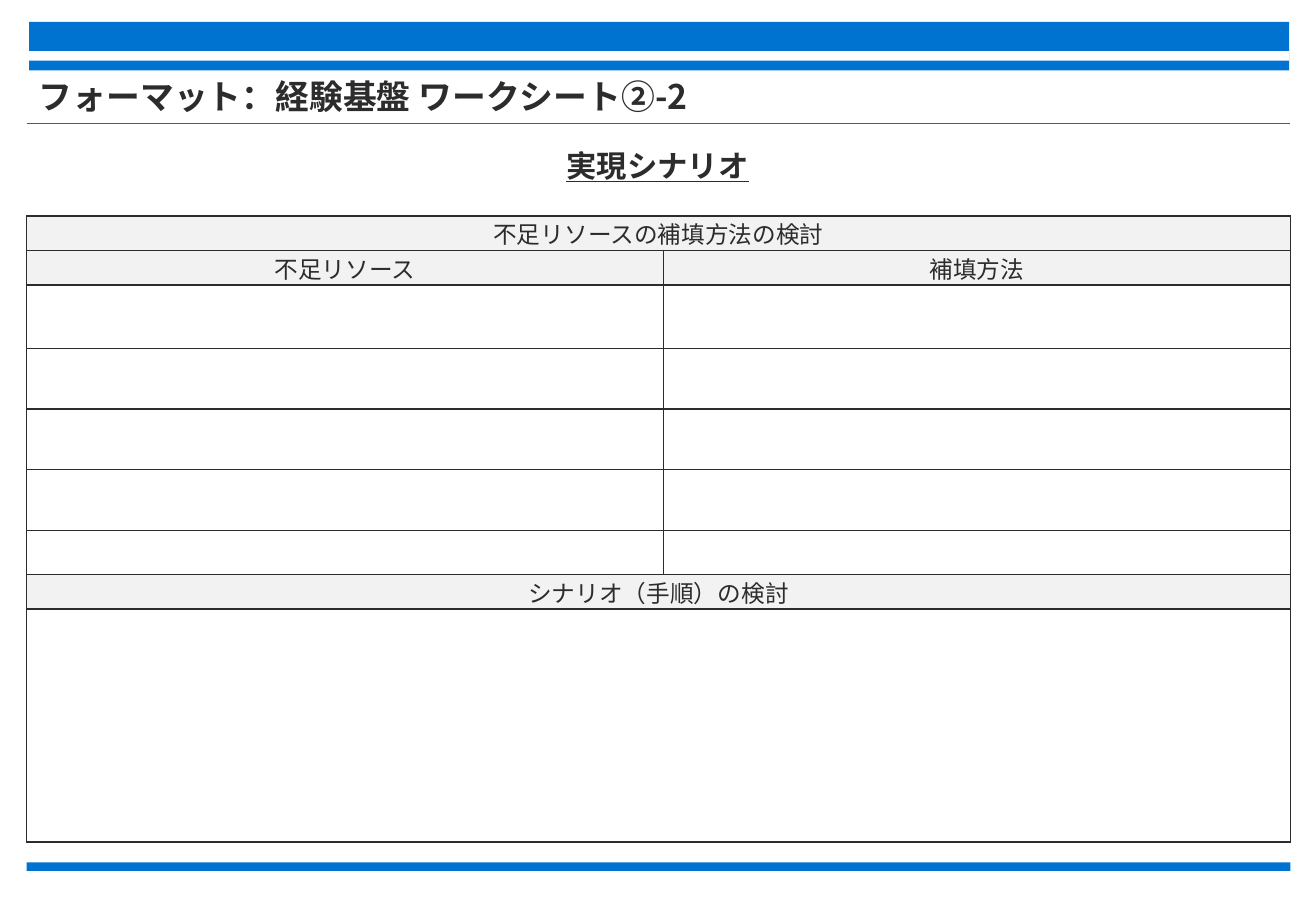
from dataclasses import dataclass

from lxml.etree import SubElement
from pptx import Presentation
from pptx.dml.color import RGBColor as RGB
from pptx.enum.shapes import MSO_CONNECTOR as CONN, MSO_SHAPE as SHAPE
from pptx.enum.text import MSO_ANCHOR as ANCHOR, PP_ALIGN as ALIGN
from pptx.oxml.ns import qn
from pptx.util import Inches, Pt


@dataclass(frozen=True)
class Theme:
    blue: RGB = RGB(0x00, 0x72, 0xCF)
    rule: RGB = RGB(0x00, 0x72, 0xCE)
    white: RGB = RGB(0xFF, 0xFF, 0xFF)
    ink: RGB = RGB(0x2C, 0x2C, 0x2C)
    header: RGB = RGB(0xF2, 0xF2, 0xF2)
    font: str = "Noto Sans CJK JP"
    latin: str = "Calibri"
    title: int = 20
    subtitle: int = 18
    body: int = 14


T = Theme()
LEFT, WIDTH = 0.22, 10.4
HEAD_H = 0.22


def inches(*lengths):
    return [Inches(v) for v in lengths]


def add_run(p, text, size, latin=T.font, bold=False, underline=False):
    r = p.add_run()
    r.text = text
    f = r.font
    f.name, f.size, f.bold, f.underline = latin, Pt(size), bold, underline
    f.color.rgb = T.ink
    SubElement(r._r.get_or_add_rPr(), qn("a:ea"), typeface=T.font)


def add_bar(s, box, color):
    sp = s.shapes.add_shape(SHAPE.RECTANGLE, *inches(*box))
    sp.shadow.inherit = False
    sp.fill.solid()
    sp.fill.fore_color.rgb = color
    sp.line.fill.background()


def add_frame(s):
    """Blue bands at top and bottom, and the rule under the title."""
    add_bar(s, (LEFT, 7.1, WIDTH, 0.07), T.blue)
    add_bar(s, (0.24, 0.18, 10.37, 0.4), T.blue)
    add_bar(s, (0.24, 0.42, 10.37, 0.08), T.white)
    line = s.shapes.add_connector(CONN.STRAIGHT, *inches(LEFT, 1.02, LEFT + WIDTH, 1.02))
    line.line.color.rgb = T.rule
    line.line.width = Pt(0.5)
    SubElement(line._element.spPr, qn("a:effectLst"))


def set_title(s, text, box):
    sp = s.shapes.title
    sp.left, sp.top, sp.width, sp.height = inches(*box)
    tf = sp.text_frame
    tf.vertical_anchor = ANCHOR.MIDDLE
    p = tf.paragraphs[0]
    p.alignment, p.line_spacing = ALIGN.LEFT, 0.9
    add_run(p, text, T.title, bold=True)


def add_subtitle(s, text, box):
    tf = s.shapes.add_textbox(*inches(*box)).text_frame
    tf.word_wrap = True
    p = tf.paragraphs[0]
    p.alignment = ALIGN.CENTER
    add_run(p, text, T.subtitle, T.latin, bold=True, underline=True)


def set_borders(cell):
    tcPr = cell._tc.get_or_add_tcPr()
    for i, side in enumerate(("lnL", "lnR", "lnT", "lnB")):
        ln = tcPr.makeelement(qn(f"a:{side}"), {"w": str(Pt(1))})
        fill = SubElement(ln, qn("a:solidFill"))
        SubElement(fill, qn("a:srgbClr"), val=str(T.ink))
        tcPr.insert(i, ln)


def fill_header(cell, text):
    cell.margin_left = cell.margin_right = Inches(0.01)
    cell.margin_top = cell.margin_bottom = 0
    cell.fill.solid()
    cell.fill.fore_color.rgb = T.header
    p = cell.text_frame.paragraphs[0]
    p.alignment = ALIGN.CENTER
    add_run(p, text, T.body)


def add_worksheet(s, top, cols, rows, headers):
    """Ruled table; a header row with fewer texts than columns is merged."""
    box = inches(LEFT, top, sum(cols), sum(rows))
    table = s.shapes.add_table(len(rows), len(cols), *box).table
    table.first_row = table.horz_banding = False
    for col, w in zip(table.columns, cols):
        col.width = Inches(w)
    for row, h in zip(table.rows, rows):
        row.height = Inches(h)
    for cell in table.iter_cells():
        cell.fill.background()
        set_borders(cell)
    for i, texts in enumerate(headers):
        if len(texts) < len(cols):
            table.cell(i, 0).merge(table.cell(i, len(cols) - 1))
        for j, text in enumerate(texts):
            fill_header(table.cell(i, j), text)


def main():
    prs = Presentation()
    prs.slide_width, prs.slide_height = inches(10.83, 7.5)
    s = prs.slides.add_slide(prs.slide_layouts[5])
    add_frame(s)
    set_title(s, "フォーマット：経験基盤 ワークシート②-2", (LEFT, 0.61, WIDTH, 0.4))
    add_worksheet(s, 1.78, [5.24, 5.16], [HEAD_H] * 2 + [0.52] + [0.5] * 4,
                  [["不足リソースの補填方法の検討"], ["不足リソース", "補填方法"]])
    add_worksheet(s, 4.73, [WIDTH], [0.25, 1.92], [["シナリオ（手順）の検討"]])
    add_subtitle(s, "実現シナリオ", (2.7, 1.16, 5.42, 0.4))
    prs.save("out.pptx")


if __name__ == "__main__":
    main()
